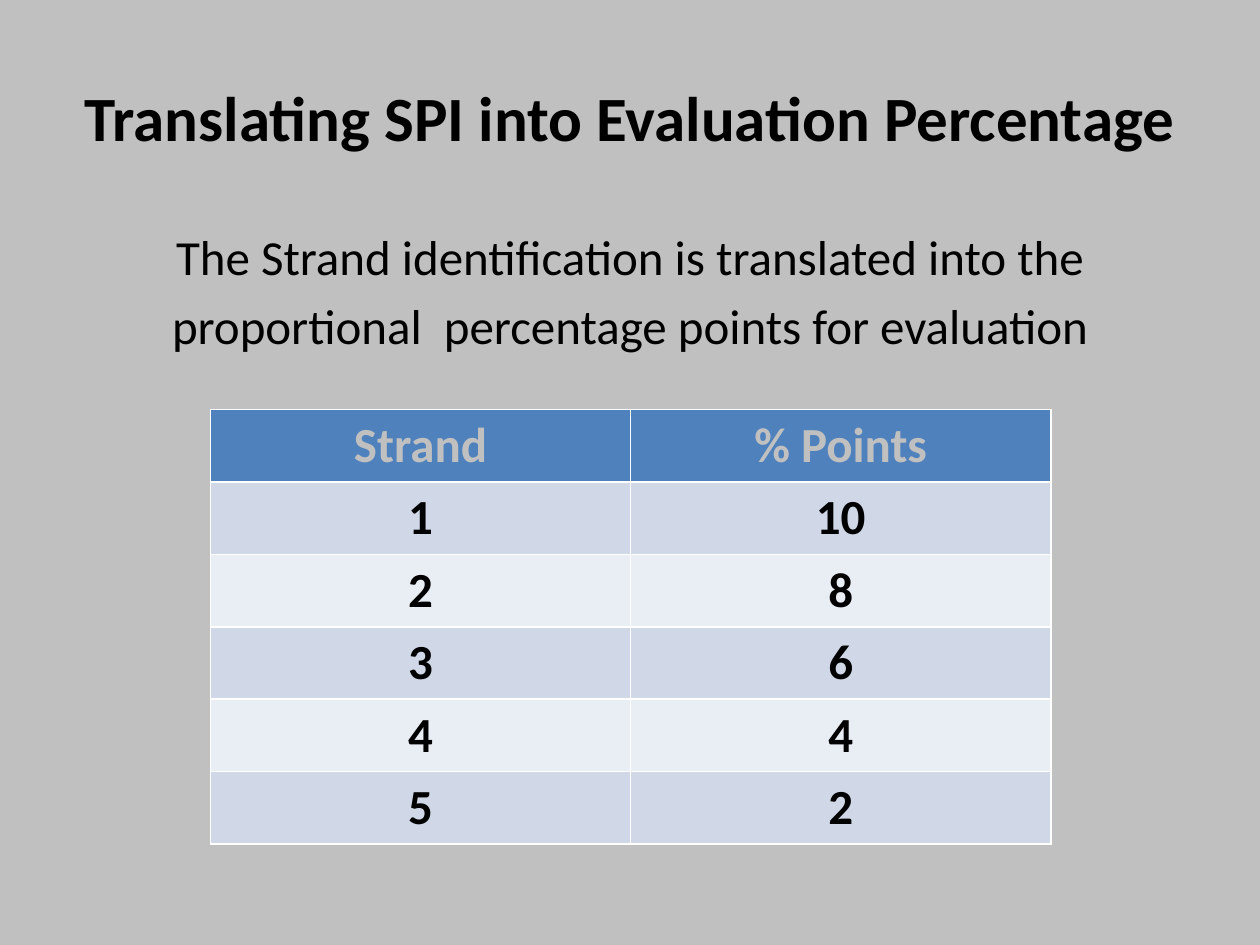
from dataclasses import dataclass

from lxml import etree
from pptx import Presentation
from pptx import util as u
from pptx.dml.color import RGBColor
from pptx.enum import text
from pptx.oxml import ns

BACKGROUND = "C0C0C0"
BLACK = "000000"
WHITE = "FFFFFF"
HEADER_FILL = "4F81BD"
BAND_FILLS = ("D0D8E8", "E9EDF4")
ROWS = [
    ("Strand", "% Points"),
    ("1", "10"),
    ("2", "8"),
    ("3", "6"),
    ("4", "4"),
    ("5", "2"),
]


@dataclass(frozen=True)
class Box:
    left: float
    top: float
    width: float
    height: float

    def lengths(self) -> tuple:
        return tuple(u.Inches(n) for n in (self.left, self.top, self.width, self.height))


def paint(fill, color: str) -> None:
    fill.solid()
    fill.fore_color.rgb = RGBColor.from_string(color)


def write(frame, content: str, size: float = 28, color: str = BLACK,
          bold: bool = False, before: float = 0) -> None:
    frame.word_wrap = True
    for index, line in enumerate(content.split("\n")):
        paragraph = frame.add_paragraph() if index else frame.paragraphs[0]
        paragraph.alignment = text.PP_ALIGN.CENTER
        paragraph.space_before = u.Pt(before)
        run = paragraph.add_run()
        run.text = line
        run.font.name = "Calibri"
        run.font.size = u.Pt(size)
        run.font.bold = bold
        paint(run.font.fill, color)


def add_text(slide, box: Box, content: str, anchor=text.MSO_ANCHOR.TOP, **style) -> None:
    frame = slide.shapes.add_textbox(*box.lengths()).text_frame
    frame.vertical_anchor = anchor
    write(frame, content, **style)


def add_border(cell, side: str, points: float) -> None:
    properties = cell._tc.get_or_add_tcPr()
    line = etree.SubElement(properties, ns.qn(f"a:ln{side}"), w=str(u.Pt(points)))
    solid = etree.SubElement(line, ns.qn("a:solidFill"))
    etree.SubElement(solid, ns.qn("a:srgbClr"), val=WHITE)


def add_strand_table(slide, box: Box) -> None:
    shape = slide.shapes.add_table(len(ROWS), len(ROWS[0]), *box.lengths())
    for row, values in enumerate(ROWS):
        for column, value in enumerate(values):
            cell = shape.table.cell(row, column)
            for side in "LRTB":
                add_border(cell, side, 1)
            paint(cell.fill, BAND_FILLS[(row - 1) % 2] if row else HEADER_FILL)
            write(cell.text_frame, value, color=BLACK if row else BACKGROUND, bold=True)


def main() -> None:
    """Build the slide that turns strands into evaluation points."""
    presentation = Presentation()
    presentation.slide_width = u.Inches(10)
    presentation.slide_height = u.Inches(7.5)
    slide = presentation.slides.add_slide(presentation.slide_layouts[6])
    paint(slide.background.fill, BACKGROUND)
    add_text(slide, Box(0.5, 0.3, 9, 1.25), "Translating SPI into Evaluation Percentage",
             anchor=text.MSO_ANCHOR.MIDDLE, size=36, bold=True)
    add_text(slide, Box(0.5, 1.75, 9, 4.95),
             "The Strand identification is translated into the\n"
             "proportional  percentage points for evaluation", before=5.6)
    add_strand_table(slide, Box(1.67, 3.25, 6.67, 3.45))
    presentation.save("out.pptx")


if __name__ == "__main__":
    main()
